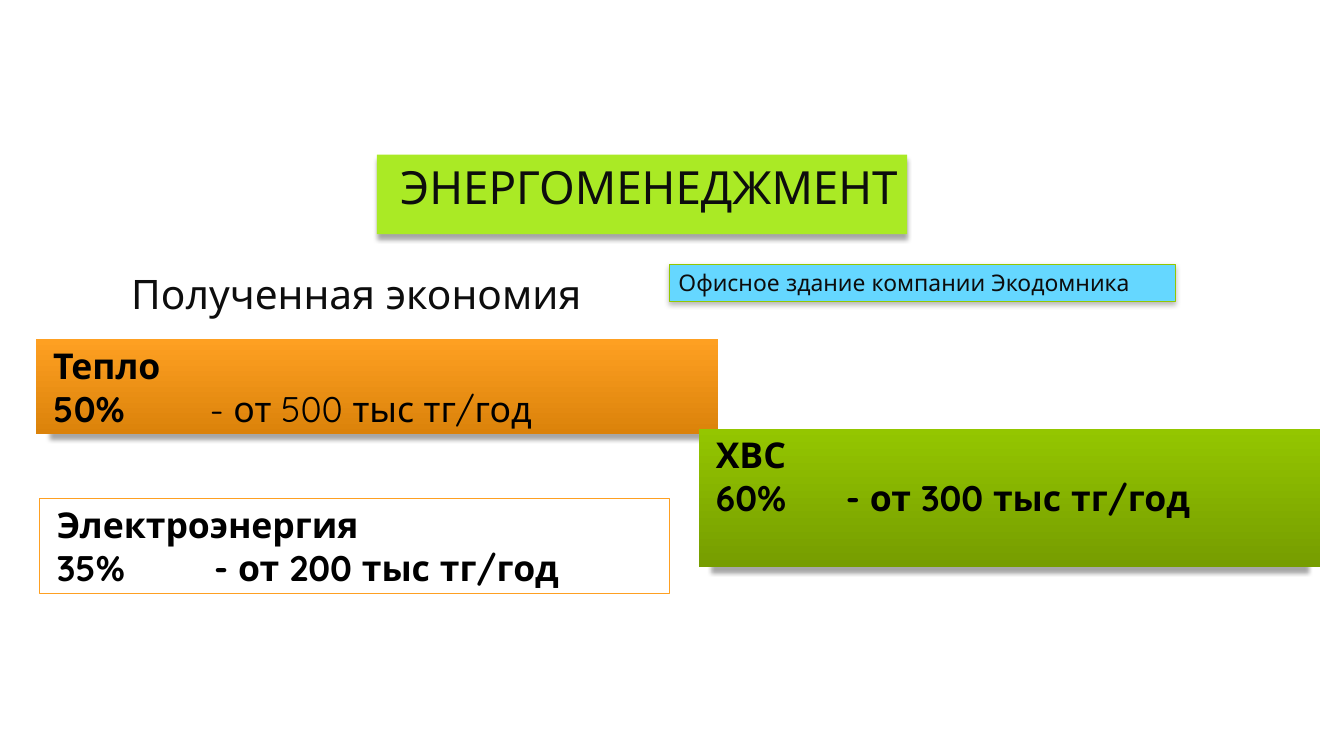
from lxml.etree import SubElement
from pptx import Presentation
from pptx.dml.color import RGBColor
from pptx.enum.shapes import MSO_SHAPE
from pptx.enum.text import MSO_ANCHOR, MSO_AUTO_SIZE, PP_ALIGN
from pptx.oxml.ns import qn
from pptx.util import Cm, Pt

COLORS = {
    "ink": "0D0D0D", "black": "000000", "white": "FFFFFF",
    "lime": "AAEA25", "sky": "65D7FF", "green": "94C600", "moss": "769D00",
    "orange": "FEA022", "amber": "DB820A",
}
FONT = "Quicksand"
TITLE = ("ЭНЕРГОМЕНЕДЖМЕНТ", (10.47, 4.3, 14.73, 2.21))
OFFICE = ("Офисное здание компании Экодомника", (18.6, 7.35, 14.05, 1.02))
HEADING = ("Полученная экономия", (3.2, 7.34, 13.21, 1.63))
SAVINGS = [
    ("Тепло", "50%", "- от 500 тыс тг/год", False, 4.35,
     (1, 9.43, 18.95, 2.64), ("orange", "amber"), None),
    ("ХВС", "60%", "- от 300 тыс тг/год", True, 3.61,
     (19.41, 11.91, 17.27, 3.84), ("green", "moss"), None),
    ("Электроэнергия", "35%", "- от 200 тыс тг/год", True, 4.37,
     (1.1, 13.86, 17.5, 2.64), ("white",), "orange"),
]
WIDE = dict(blur=3.5, dist=4, alpha=34, scale=96)
FULL = dict(WIDE, scale=100)
SOFT = dict(blur=4, dist=2, alpha=28, scale=100)


def color(name):
    return RGBColor.from_string(COLORS[name])


def place(shape, box):
    shape.left, shape.top, shape.width, shape.height = map(Cm, box)


def paint(shape, fills, line=None, width=1):
    if len(fills) == 1:
        shape.fill.solid()
        shape.fill.fore_color.rgb = color(fills[0])
    else:
        shape.fill.gradient()
        shape.fill.gradient_angle = 270
        for stop, name in zip(shape.fill.gradient_stops, fills):
            stop.color.rgb = color(name)
    if line:
        shape.line.color.rgb = color(line)
        shape.line.width = Pt(width)
    else:
        shape.line.fill.background()
    shape.shadow.inherit = False


def shade(shape, blur, dist, alpha, scale):
    effects = shape._element.spPr.find(qn("a:effectLst"))
    outer = SubElement(
        effects, qn("a:outerShdw"), blurRad=str(Pt(blur)), dist=str(Pt(dist)),
        dir="5400000", algn="ctr", rotWithShape="0")
    if scale != 100:
        outer.set("sx", str(scale * 1000))
    tint = SubElement(outer, qn("a:srgbClr"), val=COLORS["black"])
    SubElement(tint, qn("a:alpha"), val=str(alpha * 1000))


def frame(shape):
    text = shape.text_frame
    text.word_wrap = True
    text.auto_size = MSO_AUTO_SIZE.NONE
    text.vertical_anchor = MSO_ANCHOR.TOP
    return text


def style(para, size, ink, bold=False, align=PP_ALIGN.LEFT):
    para.alignment = align
    font = para.font
    font.name, font.size, font.bold = FONT, Pt(size), bold
    font.color.rgb = color(ink)


def label(shape, words, size, align):
    text = frame(shape)
    text.text = words
    style(text.paragraphs[0], size, "ink", align=align)


def block(slide, box):
    return slide.shapes.add_shape(MSO_SHAPE.RECTANGLE, *map(Cm, box))


def saving(slide, name, share, sum_, bold, tab, box, fills, line):
    shape = block(slide, box)
    paint(shape, fills, line, 1.25)
    if not line:
        shade(shape, **WIDE)
    text = frame(shape)
    text.margin_left = Cm(0.48)
    head, para = text.paragraphs[0], text.add_paragraph()
    head.text = name
    para.add_run().text = share
    tail = para.add_run()
    tail.text = "\t" + sum_
    if not bold:
        tail.font.bold = False
    tabs = SubElement(para._p.get_or_add_pPr(), qn("a:tabLst"))
    SubElement(tabs, qn("a:tab"), pos=str(Cm(tab)), algn="l")
    for item in (head, para):
        style(item, 28, "black", bold=True)


def main():
    deck = Presentation()
    deck.slide_width, deck.slide_height = Cm(37.34), Cm(21.01)
    slide = deck.slides.add_slide(deck.slide_layouts[5])

    words, box = TITLE
    title = slide.shapes.title
    place(title, box)
    paint(title, ("lime",))
    shade(title, **FULL)
    label(title, words, 36, PP_ALIGN.RIGHT)

    words, box = OFFICE
    office = block(slide, box)
    paint(office, ("sky",), "green", 0.75)
    shade(office, **SOFT)
    label(office, words, 18, PP_ALIGN.LEFT)

    words, box = HEADING
    label(slide.shapes.add_textbox(*map(Cm, box)), words, 32, PP_ALIGN.RIGHT)

    for row in SAVINGS:
        saving(slide, *row)

    deck.save("out.pptx")


if __name__ == "__main__":
    main()
